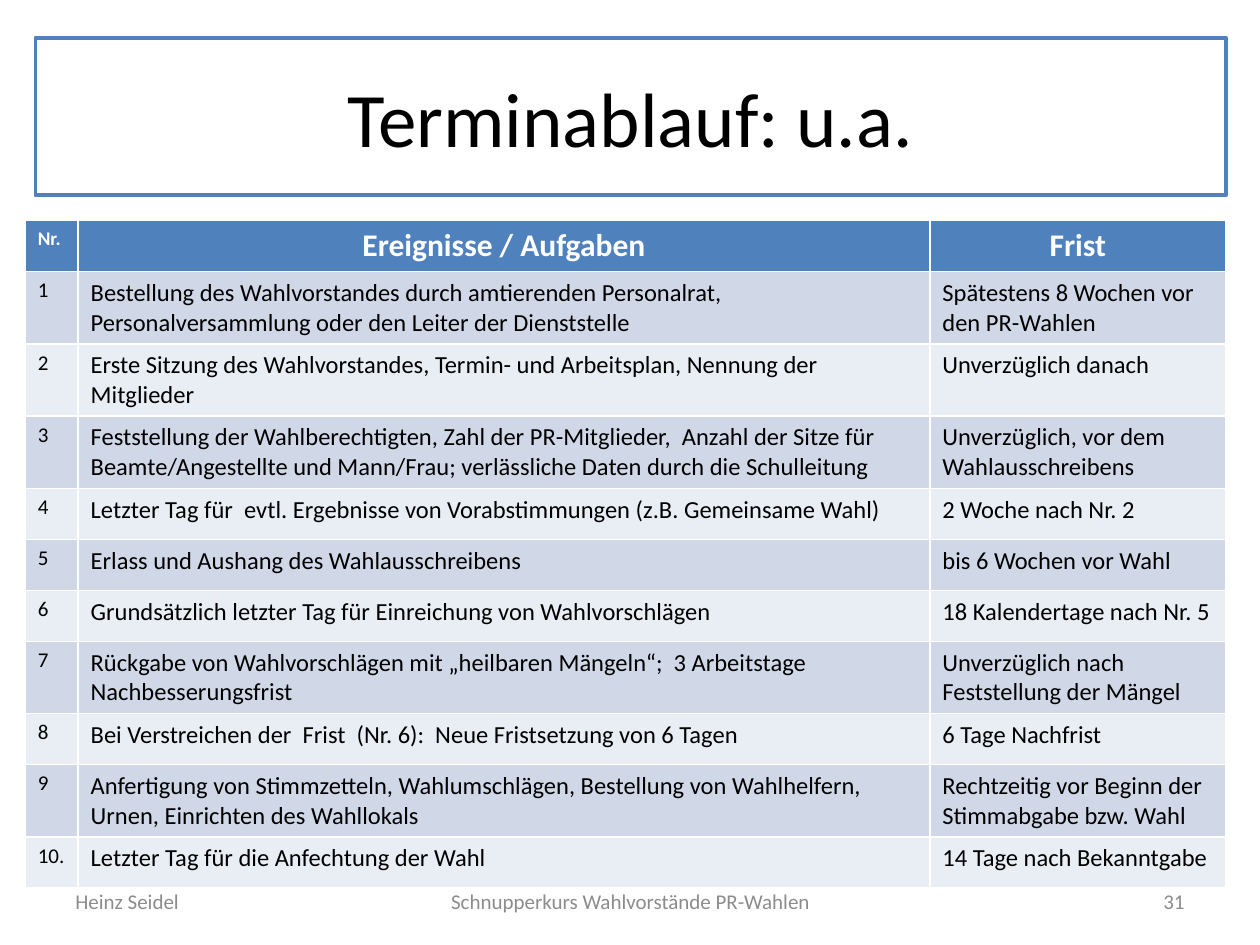
"""Builds the slide with the timetable for a staff council election."""
from dataclasses import dataclass

from pptx import Presentation
from pptx import util as u
from pptx.dml.color import RGBColor
from pptx.enum import shapes, text

LEFT, MID, RIGHT = text.PP_ALIGN.LEFT, text.PP_ALIGN.CENTER, text.PP_ALIGN.RIGHT

HEAD = ("Nr.", "Ereignisse / Aufgaben", "Frist")
STEPS = (
    ("1", "Bestellung des Wahlvorstandes durch amtierenden Personalrat, "
     "Personalversammlung oder den Leiter der Dienststelle",
     "Spätestens 8 Wochen vor den PR-Wahlen"),
    ("2", "Erste Sitzung des Wahlvorstandes, Termin- und Arbeitsplan, "
     "Nennung der Mitglieder", "Unverzüglich danach"),
    ("3", "Feststellung der Wahlberechtigten, Zahl der PR-Mitglieder,  "
     "Anzahl der Sitze für Beamte/Angestellte und Mann/Frau; "
     "verlässliche Daten durch die Schulleitung",
     "Unverzüglich, vor dem Wahlausschreibens"),
    ("4", "Letzter Tag für  evtl. Ergebnisse von Vorabstimmungen "
     "(z.B. Gemeinsame Wahl)", "2 Woche nach Nr. 2"),
    ("5", "Erlass und Aushang des Wahlausschreibens", "bis 6 Wochen vor Wahl"),
    ("6", "Grundsätzlich letzter Tag für Einreichung von Wahlvorschlägen",
     "18 Kalendertage nach Nr. 5"),
    ("7", "Rückgabe von Wahlvorschlägen mit „heilbaren Mängeln“;  "
     "3 Arbeitstage Nachbesserungsfrist",
     "Unverzüglich nach Feststellung der Mängel"),
    ("8", "Bei Verstreichen der  Frist  (Nr. 6):  Neue Fristsetzung von 6 Tagen",
     "6 Tage Nachfrist"),
    ("9", "Anfertigung von Stimmzetteln, Wahlumschlägen, Bestellung von "
     "Wahlhelfern, Urnen, Einrichten des Wahllokals",
     "Rechtzeitig vor Beginn der Stimmabgabe bzw. Wahl"),
    ("10.", "Letzter Tag für die Anfechtung der Wahl", "14 Tage nach Bekanntgabe"),
)


@dataclass(frozen=True)
class Theme:
    """Colours, font, type sizes and the grid of 100 columns by 75 rows."""
    font: str = "Calibri"
    ink: str = "000000"
    paper: str = "FFFFFF"
    blue: str = "4F81BD"
    bands: tuple = ("D0D8E8", "E9EDF4")
    grey: str = "8C8C8C"
    title: int = 44
    head: tuple = (11, 18, 18)
    body: tuple = (12, 14, 14)
    foot: int = 12
    cols: int = 100
    rows: int = 75


class Deck:
    """Holds the theme and the current slide."""

    def __init__(self, theme):
        """Opens a deck with one blank slide."""
        self.theme = theme
        self.prs = Presentation()
        self.prs.slide_width, self.prs.slide_height = u.Inches(10), u.Inches(7.5)
        self.slide = self.prs.slides.add_slide(self.prs.slide_layouts[6])

    def wide(self, cols):
        """Turns grid columns into a length."""
        return round(self.prs.slide_width * cols / self.theme.cols)

    def high(self, rows):
        """Turns grid rows into a length."""
        return round(self.prs.slide_height * rows / self.theme.rows)

    def area(self, left, top, width, height):
        """Turns a grid box into lengths."""
        return self.wide(left), self.high(top), self.wide(width), self.high(height)

    def paint(self, fill, color):
        """Sets a solid fill."""
        fill.solid()
        fill.fore_color.rgb = RGBColor.from_string(color)

    def label(self, frame, words, size, color, align=LEFT, bold=False):
        """Adds one run to the first paragraph of a frame."""
        frame.word_wrap = True
        para = frame.paragraphs[0]
        para.alignment = align
        run = para.add_run()
        run.text = words
        font = run.font
        font.name, font.size, font.bold = self.theme.font, u.Pt(size), bold
        font.color.rgb = RGBColor.from_string(color)

    def title(self, words, *box):
        """Adds the framed title."""
        look = self.theme
        shape = self.slide.shapes.add_shape(
            shapes.MSO_SHAPE.RECTANGLE, *self.area(*box))
        shape.shadow.inherit = False
        self.paint(shape.fill, look.paper)
        self.paint(shape.line.fill, look.blue)
        shape.line.width = u.Pt(2)
        shape.text_frame.vertical_anchor = text.MSO_ANCHOR.MIDDLE
        self.label(shape.text_frame, words, look.title, look.ink, MID)

    def table(self, head, steps, left, top, widths, row):
        """Adds a table with a head row and banded body rows."""
        look = self.theme
        count = len(steps) + 1
        box = self.area(left, top, sum(widths), row * count)
        grid = self.slide.shapes.add_table(count, len(widths), *box).table
        for col, width in zip(grid.columns, widths):
            col.width = self.wide(width)
        for y, line in enumerate((head, *steps)):
            first = y == 0
            fill = look.blue if first else look.bands[(y - 1) % 2]
            color = look.paper if first else look.ink
            sizes = look.head if first else look.body
            for x, words in enumerate(line):
                cell = grid.cell(y, x)
                self.paint(cell.fill, fill)
                align = MID if first and x else LEFT
                self.label(cell.text_frame, words, sizes[x], color, align, first)

    def foot(self, words, left, width, align):
        """Adds one part of the footer."""
        look = self.theme
        box = self.slide.shapes.add_textbox(*self.area(left, 69.5, width, 4))
        box.text_frame.vertical_anchor = text.MSO_ANCHOR.MIDDLE
        self.label(box.text_frame, words, look.foot, look.grey, align)


def main():
    """Builds and saves the slide."""
    deck = Deck(Theme())
    deck.title("Terminablauf: u.a.", 2.8, 3, 94.5, 12.5)
    deck.table(HEAD, STEPS, 2, 17.5, (4.2, 67.6, 23.5), 4.05)
    deck.foot("Heinz Seidel", 5, 23.3, LEFT)
    deck.foot("Schnupperkurs Wahlvorstände PR-Wahlen", 34.2, 31.7, MID)
    deck.foot("31", 71.7, 23.3, RIGHT)
    deck.prs.save("out.pptx")


if __name__ == "__main__":
    main()
